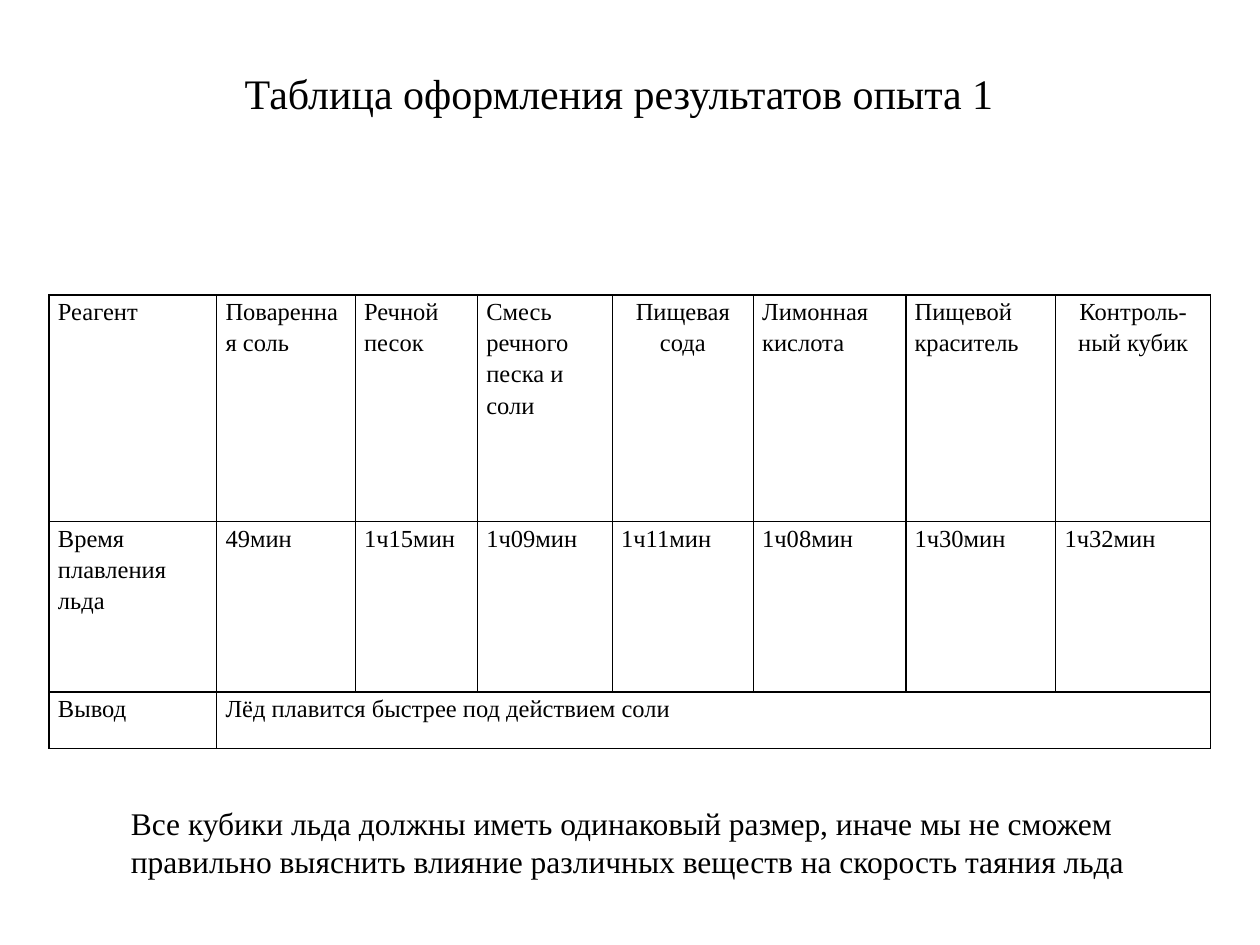
from lxml import etree
from pptx import Presentation
from pptx.dml.color import RGBColor
from pptx.enum.text import MSO_ANCHOR, PP_ALIGN
from pptx.oxml.ns import qn
from pptx.util import Inches, Pt

CENTER, LEFT = PP_ALIGN.CENTER, PP_ALIGN.LEFT
MIDDLE, TOP = MSO_ANCHOR.MIDDLE, MSO_ANCHOR.TOP
FONT = "Times New Roman"
COLORS = {"ink": "000000", "border": "000000"}
SLIDE_WIDTH, SLIDE_HEIGHT = 10, 7.5

TITLE = "Таблица оформления результатов опыта 1"
NOTE = ("Все кубики льда должны иметь одинаковый размер, иначе мы не сможем "
        "правильно выяснить влияние различных веществ на скорость таяния льда")
# Reagent, melting time, column width, alignment of the heading
REAGENTS = [
    ("Реагент", "Время плавления льда", 1.33, LEFT),
    ("Поваренная соль", "49мин", 1.1, LEFT),
    ("Речной песок", "1ч15мин", 0.97, LEFT),
    ("Смесь речного песка и соли", "1ч09мин", 1.07, LEFT),
    ("Пищевая сода", "1ч11мин", 1.12, CENTER),
    ("Лимонная кислота", "1ч08мин", 1.21, LEFT),
    ("Пищевой краситель", "1ч30мин", 1.19, LEFT),
    ("Контроль-ный кубик", "1ч32мин", 1.23, CENTER),
]
CONCLUSION = ("Вывод", "Лёд плавится быстрее под действием соли")
ROW_HEIGHTS = [1.8, 1.35, 0.45]


def write(frame, text, size, align=LEFT, line_spacing=None):
    frame.text = text
    for paragraph in frame.paragraphs:
        paragraph.alignment = align
        paragraph.line_spacing = line_spacing
        for run in paragraph.runs:
            run.font.name = FONT
            run.font.size = Pt(size)
            run.font.color.rgb = RGBColor.from_string(COLORS["ink"])


def add_text(slide, box, text, size, align=LEFT, anchor=TOP):
    frame = slide.shapes.add_textbox(*map(Inches, box)).text_frame
    frame.word_wrap = True
    frame.vertical_anchor = anchor
    write(frame, text, size, align)
    return frame


def add_title(slide, box):
    """Centre the title slightly above and left of the middle of its box."""
    frame = add_text(slide, box, TITLE, 24, CENTER, MIDDLE)
    frame.margin_bottom = Inches(0.43)
    frame.margin_right = Inches(0.27)


def add_borders(cell):
    """Draw the four sides; they must come before the fill in tcPr."""
    properties = cell._tc.get_or_add_tcPr()
    for position, side in enumerate(("a:lnL", "a:lnR", "a:lnT", "a:lnB")):
        line = etree.Element(qn(side), w=str(Pt(1)))
        fill = etree.SubElement(line, qn("a:solidFill"))
        etree.SubElement(fill, qn("a:srgbClr"), val=COLORS["border"])
        properties.insert(position, line)


def fill_cell(cell, text, align=LEFT):
    cell.margin_left = cell.margin_right = Inches(0.07)
    cell.margin_top = cell.margin_bottom = 0
    write(cell.text_frame, text, 14, align, 1.15)


def add_results(slide, box):
    table = slide.shapes.add_table(
        len(ROW_HEIGHTS), len(REAGENTS), *map(Inches, box)).table
    table.first_row = table.horz_banding = False
    for row, height in zip(table.rows, ROW_HEIGHTS):
        row.height = Inches(height)
    for cell in table.iter_cells():
        cell.fill.background()
        add_borders(cell)
    for index, (reagent, time, width, align) in enumerate(REAGENTS):
        table.columns[index].width = Inches(width)
        fill_cell(table.cell(0, index), reagent, align)
        fill_cell(table.cell(1, index), time)
    table.cell(2, 1).merge(table.cell(2, len(REAGENTS) - 1))
    for index, text in enumerate(CONCLUSION):
        fill_cell(table.cell(2, index), text)


def main():
    deck = Presentation()
    deck.slide_width = Inches(SLIDE_WIDTH)
    deck.slide_height = Inches(SLIDE_HEIGHT)
    slide = deck.slides.add_slide(deck.slide_layouts[6])
    table_width = sum(width for _, _, width, _ in REAGENTS)
    table_left = (SLIDE_WIDTH - table_width) / 2
    add_title(slide, (0.5, 0.3, SLIDE_WIDTH - 2 * 0.5, 1.25))
    add_results(slide, (table_left, 2.34, table_width, sum(ROW_HEIGHTS)))
    add_text(slide, (0.94, 6.33, 8.52, 1.01), NOTE, 18)
    deck.save("out.pptx")


if __name__ == "__main__":
    main()
